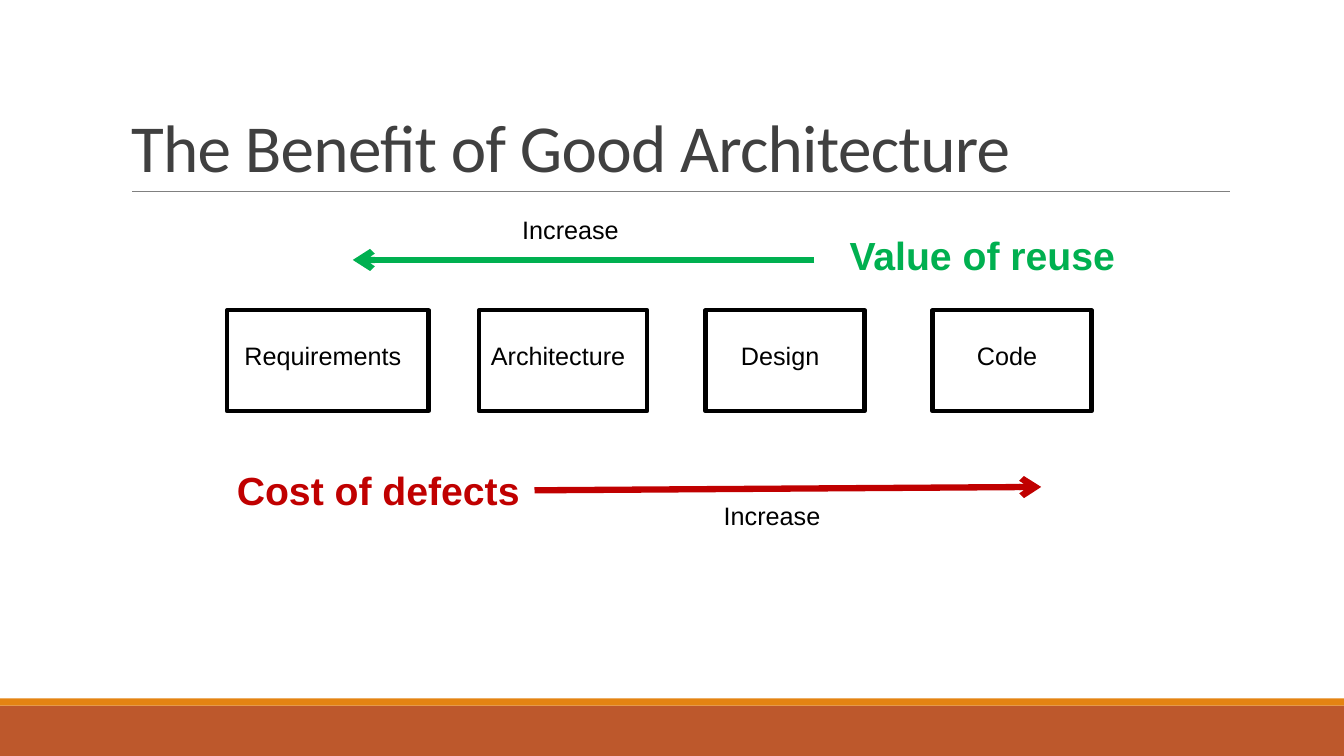
from dataclasses import dataclass

from lxml.etree import SubElement
from pptx import Presentation
from pptx.dml.color import RGBColor as RGB
from pptx.enum.shapes import MSO_CONNECTOR as LINK, MSO_SHAPE as SHAPE
from pptx.enum.text import MSO_ANCHOR as ANCHOR, MSO_AUTO_SIZE as FIT, PP_ALIGN as ALIGN
from pptx.oxml.ns import qn
from pptx.util import Cm, Pt


@dataclass(frozen=True)
class Theme:
    title: RGB = RGB.from_string("404040")
    rule: RGB = RGB.from_string("808080")
    ink: RGB = RGB.from_string("000000")
    reuse: RGB = RGB.from_string("00B050")
    defects: RGB = RGB.from_string("C00000")
    stripe: RGB = RGB.from_string("E48312")
    footer: RGB = RGB.from_string("BD582C")
    heading_font: str = "Calibri"
    body_font: str = "Arial"
    title_size: int = 48
    message_size: int = 28
    label_size: int = 18


THEME = Theme()
WIDTH, HEIGHT = 33.87, 19.05
STAGES = [
    ("Requirements", 0, 5.08),
    ("Architecture", 6.35, 4.24),
    ("Design", 12.06, 4.01),
    ("Code", 17.78, 4.01),
]


def style(paragraph, size, color, name=THEME.body_font, bold=False):
    font = paragraph.font
    font.name, font.size, font.bold = name, Pt(size), bold
    font.color.rgb = color


def add_line(slide, start, end, color, weight, arrow=False):
    line = slide.shapes.add_connector(LINK.STRAIGHT, *map(Cm, start + end))
    line.line.color.rgb = color
    line.line.width = Pt(weight)
    if arrow:
        SubElement(line.line._get_or_add_ln(), qn("a:tailEnd"), type="arrow")
    SubElement(line._element.spPr, qn("a:effectLst"))
    return line


def add_bar(slide, left, top, width, height, color):
    bar = slide.shapes.add_shape(SHAPE.RECTANGLE, *map(Cm, (left, top, width, height)))
    bar.shadow.inherit = False
    bar.fill.solid()
    bar.fill.fore_color.rgb = color
    bar.line.fill.background()


def add_text(slide, text, left, top, width, height, size, color, bold=False):
    box = slide.shapes.add_textbox(*map(Cm, (left, top, width, height)))
    frame = box.text_frame
    frame.word_wrap = False
    frame.auto_size = FIT.SHAPE_TO_FIT_TEXT
    frame.text = text
    style(frame.paragraphs[0], size, color, bold=bold)
    return box


def add_message(slide, text, left, top, width, color):
    return add_text(slide, text, left, top, width, 1.45, THEME.message_size, color, True)


def add_increase(slide, left, top):
    add_text(slide, "Increase", left, top, 2.97, 1.02, THEME.label_size, THEME.ink)


def add_stage(slide, name, left, top, width, height):
    stage = slide.shapes.add_shape(SHAPE.RECTANGLE, *map(Cm, (left, top, width, height)))
    stage.shadow.inherit = False
    stage.fill.background()
    stage.line.color.rgb = THEME.ink
    stage.line.width = Pt(3)
    frame = stage.text_frame
    frame.word_wrap = True
    frame.vertical_anchor = ANCHOR.MIDDLE
    frame.margin_left = frame.margin_top = 0
    frame.margin_right = frame.margin_bottom = Cm(0.25)
    frame.text = name
    frame.paragraphs[0].alignment = ALIGN.CENTER
    style(frame.paragraphs[0], THEME.label_size, THEME.ink)


def draw_footer(slide, left, top, width, height):
    stripe = 0.18
    add_bar(slide, left, top + stripe, width, height - stripe, THEME.footer)
    add_bar(slide, left, top, width, stripe, THEME.stripe)


def draw_title(slide, left, top, width, height):
    title = slide.shapes.title
    title.left, title.top, title.width, title.height = map(Cm, (left, top, width, height))
    frame = title.text_frame
    frame.text = "The Benefit of Good Architecture"
    frame.word_wrap = True
    frame.auto_size = FIT.NONE
    frame.vertical_anchor = ANCHOR.BOTTOM
    heading = frame.paragraphs[0]
    heading.alignment = ALIGN.LEFT
    heading.line_spacing = 0.85
    style(heading, THEME.title_size, THEME.title, THEME.heading_font)
    heading.runs[0]._r.get_or_add_rPr().set("spc", "-50")
    bottom = top + height
    add_line(slide, (left + 0.28, bottom), (left + width, bottom), THEME.rule, 0.5)


def draw_reuse(slide, left, top):
    add_increase(slide, left + 7.19, top)
    add_line(slide, (left + 14.8, top + 1.27), (left + 3.17, top + 1.27),
             THEME.reuse, 4.5, arrow=True)
    add_message(slide, "Value of reuse", left + 15.44, top + 0.43, 7.29, THEME.reuse)


def draw_stages(slide, left, top, height):
    for name, offset, width in STAGES:
        add_stage(slide, name, left + offset, top, width, height)


def draw_defects(slide, left, top):
    cost = add_message(slide, "Cost of defects", left, top, 7.75, THEME.defects)
    arrow = add_line(slide, (left + 7.75, top + 0.73), (left + 20.52, top + 0.64),
                     THEME.defects, 4.5, arrow=True)
    arrow.begin_connect(cost, 3)
    add_increase(slide, left + 12.27, top + 0.86)


def main():
    deck = Presentation()
    deck.slide_width, deck.slide_height = Cm(WIDTH), Cm(HEIGHT)
    slide = deck.slides.add_slide(deck.slide_layouts[5])
    draw_footer(slide, 0, 17.6, WIDTH, HEIGHT - 17.6)
    draw_title(slide, 3.05, 0.79, 27.94, 4.04)
    draw_reuse(slide, 5.72, 5.28)
    draw_stages(slide, 5.72, 7.82, 2.54)
    draw_defects(slide, 5.72, 11.63)
    deck.save("out.pptx")


if __name__ == "__main__":
    main()
